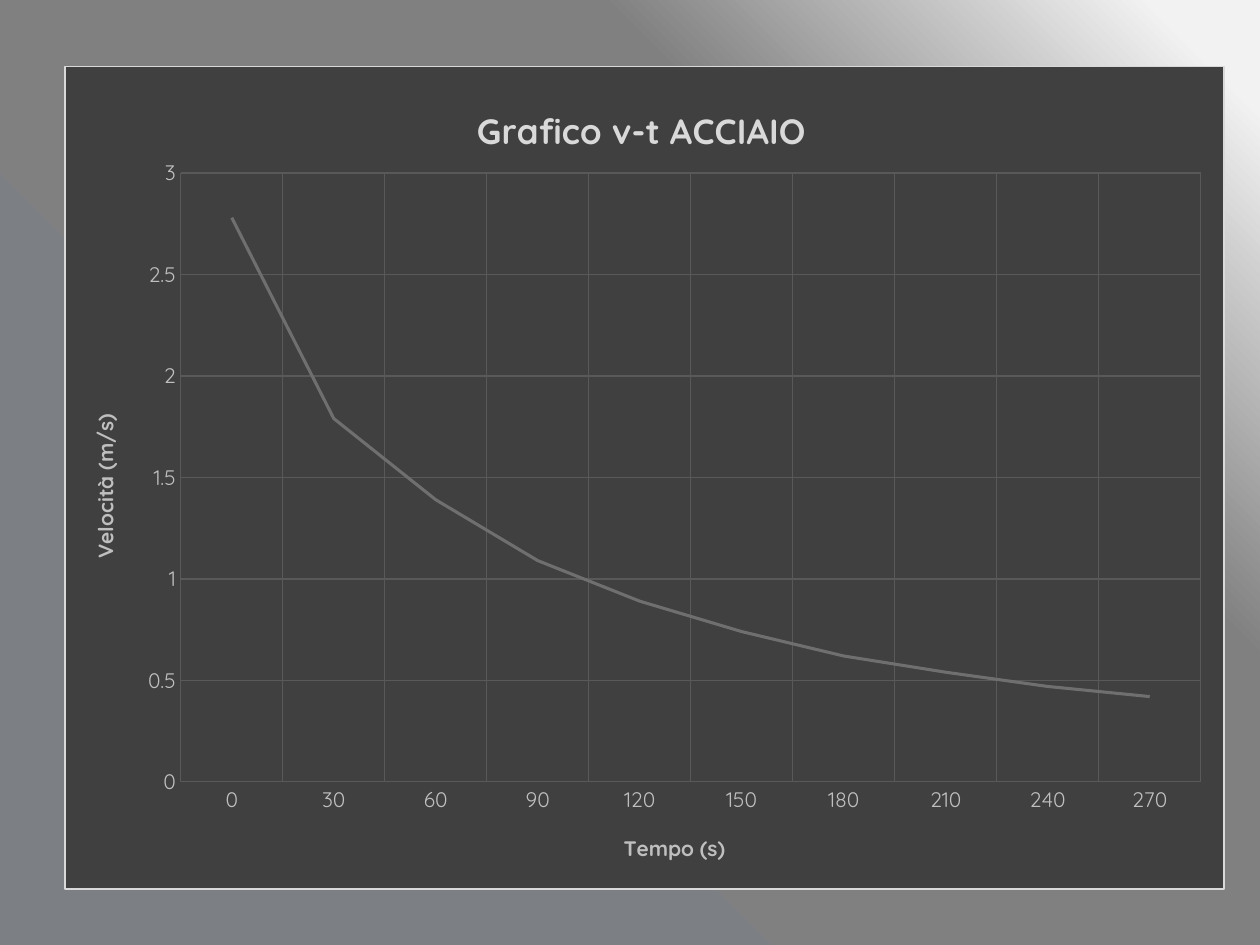
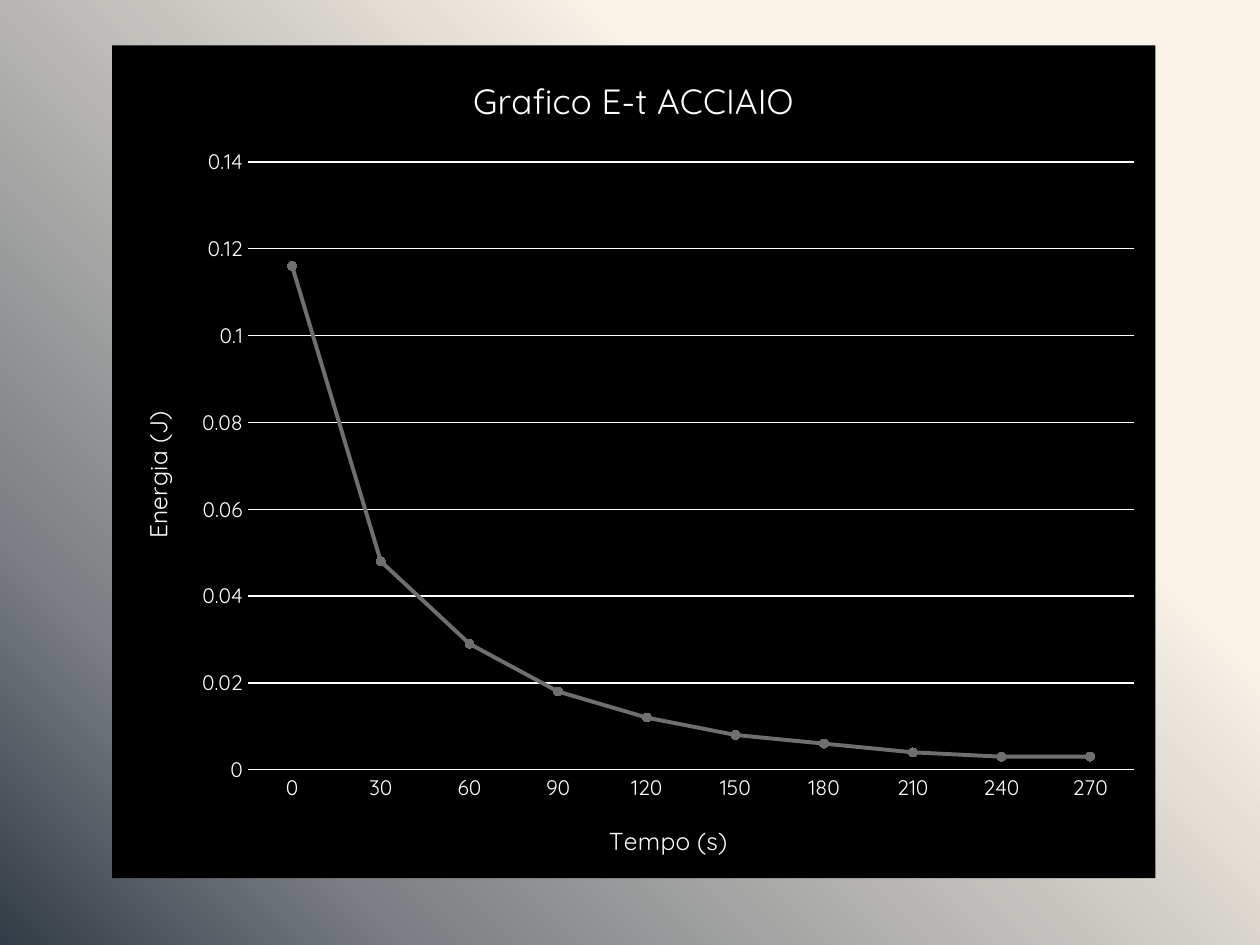
"""Build two slides with line charts of speed and energy against time for steel."""
from copy import deepcopy

from pptx import Presentation
from pptx.chart.data import CategoryChartData
from pptx.dml.color import RGBColor
from pptx.enum.chart import XL_CHART_TYPE as CT, XL_MARKER_STYLE as MS, XL_TICK_MARK as TM
from pptx.oxml import parse_xml
from pptx.oxml.ns import nsdecls, qn
from pptx.util import Inches, Pt

FONT = "Quicksand"
C = {
    "white": "FFFFFF", "black": "000000", "panel": "404040", "grid": "595959",
    "border": "D9D9D9", "label": "BFBFBF", "series": "6F6F6F",
    "light": "F2F2F2", "mid": "808080", "steel": "7C8084",
    "cream": "F8F2E7", "navy": "333B46",
}
TIMES = [str(t) for t in range(0, 300, 30)]
TIME_TITLE = "Tempo (s)"

SLIDES = [
    dict(
        title="Grafico v-t ACCIAIO", value_title="Velocità (m/s)",
        values=[2.78, 1.79, 1.39, 1.09, 0.89, 0.74, 0.62, 0.54, 0.47, 0.42],
        background=[(5, "light"), (30, "mid"), (100, "steel")],
        box=(0.51, 0.52, 9.21, 6.54), plot=(0.1, 0.13, 0.88, 0.74),
        title_at=(0.35, 0.04), kind=CT.LINE, marker=None, line=1.75,
        fill="panel", border="border", grid="grid", time_grid=True, time_line=None,
        title_color="border", label="label", bold=True, axis_title=12,
    ),
    dict(
        title="Grafico E-t ACCIAIO", value_title="Energia (J)",
        values=[0.116, 0.048, 0.029, 0.018, 0.012, 0.008, 0.006, 0.004, 0.003, 0.003],
        background=[(30, "cream"), (81, "steel"), (100, "navy")],
        box=(0.89, 0.36, 8.28, 6.61), plot=(0.13, 0.14, 0.85, 0.73),
        title_at=None, kind=CT.LINE_MARKERS, marker=5, line=2.25,
        fill="black", border=None, grid="white", time_grid=False, time_line="white",
        title_color="white", label="white", bold=False, axis_title=14,
    ),
]


def rgb(name):
    return RGBColor.from_string(C[name])


def set_font(font, size, color, bold=False):
    font.name, font.size, font.bold = FONT, Pt(size), bold
    font.color.rgb = rgb(color)


def set_line(line, color, width=0.75):
    if color is None:
        line.fill.background()
    else:
        line.color.rgb = rgb(color)
        line.width = Pt(width)


def set_title(owner, text, size, color, bold):
    tf = owner.text_frame
    tf.text = text
    set_font(tf.paragraphs[0].runs[0].font, size, color, bold)


def set_background(s, stops):
    fill = s.background.fill
    fill.gradient()
    fill.gradient_angle = 225
    gs_list = s.element.find(".//" + qn("a:gsLst"))
    gs_list.append(deepcopy(gs_list[0]))
    for stop, (position, color) in zip(fill.gradient_stops, stops):
        stop.color.rgb = rgb(color)
        stop.position = position / 100


def panel_format(fill, border):
    line = f'<a:solidFill><a:srgbClr val="{C[border]}"/></a:solidFill>' if border else "<a:noFill/>"
    return parse_xml(
        f'<c:spPr {nsdecls("c", "a")}><a:solidFill><a:srgbClr val="{C[fill]}"/></a:solidFill>'
        f'<a:ln w="{Pt(0.75)}">{line}</a:ln></c:spPr>')


def place(parent, index, fractions, inner=False):
    for old in parent.findall(qn("c:layout")):
        parent.remove(old)
    target = '<c:layoutTarget val="inner"/>' if inner else ""
    keys = ["x", "y", "w", "h"][:len(fractions)]
    modes = "".join(f'<c:{k}Mode val="edge"/>' for k in keys[:2])
    sizes = "".join(f'<c:{k} val="{v}"/>' for k, v in zip(keys, fractions))
    parent.insert(index, parse_xml(
        f'<c:layout {nsdecls("c")}><c:manualLayout>{target}{modes}{sizes}'
        '</c:manualLayout></c:layout>'))


def format_axis(axis, text, d, grid, line):
    set_title(axis.axis_title, text, d["axis_title"], d["label"], d["bold"])
    set_font(axis.tick_labels.font, 12, d["label"])
    axis.major_tick_mark = axis.minor_tick_mark = TM.NONE
    axis.has_major_gridlines = grid
    if grid:
        set_line(axis.major_gridlines.format.line, d["grid"])
    set_line(axis.format.line, line)


def format_panel(chart, d):
    space = chart.element
    space.find(qn("c:date1904")).addnext(
        parse_xml(f'<c:roundedCorners {nsdecls("c")} val="0"/>'))
    space.find(qn("c:chart")).addnext(panel_format(d["fill"], d["border"]))
    plot_area = space.find(".//" + qn("c:plotArea"))
    place(plot_area, 0, d["plot"], inner=True)
    plot_area.append(panel_format(d["fill"], None))
    if d["title_at"]:
        place(space.find(qn("c:chart")).find(qn("c:title")), 1, d["title_at"])


def add_line_chart(s, d):
    data = CategoryChartData()
    data.categories = TIMES
    data.add_series("Series 1", d["values"])
    chart = s.shapes.add_chart(d["kind"], *map(Inches, d["box"]), data).chart
    set_font(chart.font, 10, "white")
    chart.has_legend = False
    chart.has_title = True
    set_title(chart.chart_title, d["title"], 20, d["title_color"], d["bold"])
    format_axis(chart.category_axis, TIME_TITLE, d, d["time_grid"], d["time_line"])
    format_axis(chart.value_axis, d["value_title"], d, True, None)
    chart.plots[0].vary_by_categories = False
    series = chart.plots[0].series[0]
    series.smooth = False
    set_line(series.format.line, "series", d["line"])
    marker = series.marker
    marker.style = MS.CIRCLE if d["marker"] else MS.NONE
    if d["marker"]:
        marker.size = d["marker"]
        marker.format.fill.solid()
        marker.format.fill.fore_color.rgb = rgb("series")
        set_line(marker.format.line, "series")
    format_panel(chart, d)


def main():
    prs = Presentation()
    prs.slide_width, prs.slide_height = Inches(10), Inches(7.5)
    for d in SLIDES:
        s = prs.slides.add_slide(prs.slide_layouts[6])
        set_background(s, d["background"])
        add_line_chart(s, d)
    prs.save("out.pptx")


if __name__ == "__main__":
    main()
